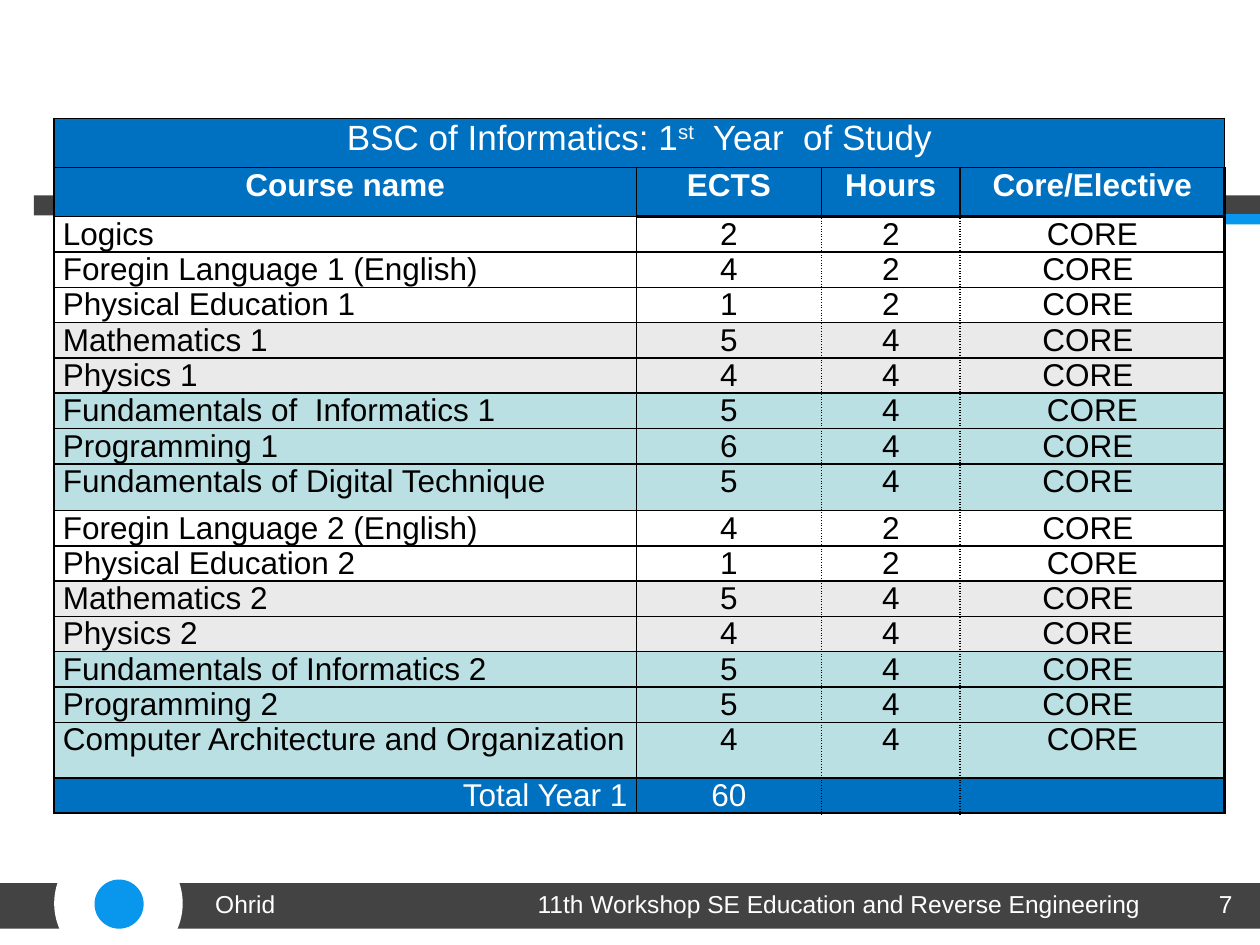
from typing import NamedTuple, Optional

from lxml import etree
from pptx import Presentation, util as u
from pptx.dml.color import RGBColor
from pptx.enum import shapes, text
from pptx.oxml.ns import qn

COLORS = {
    "white": "FFFFFF", "black": "000000", "charcoal": "434343", "accent": "0996ED",
    "header": "0070C0", "science": "EAEAEA", "computing": "BBE0E3",
}
FONT = "Arial"
ALIGN = text.PP_ALIGN
OVAL, RECTANGLE = shapes.MSO_SHAPE.OVAL, shapes.MSO_SHAPE.RECTANGLE


class Box(NamedTuple):
    """Left, top, width and height in percent of the slide."""
    left: float
    top: float
    width: float
    height: float


class Decoration(NamedTuple):
    kind: shapes.MSO_SHAPE
    box: Box
    color: str


class Label(NamedTuple):
    wording: str
    box: Box
    align: ALIGN


class Row(NamedTuple):
    values: tuple[str, ...]
    fill: Optional[str] = None
    height: float = 3.73
    ink: str = "black"
    first_align: ALIGN = ALIGN.JUSTIFY
    bold: bool = False


class Border(NamedTuple):
    width: float = 1
    dash: str = "solid"


FOOTER_TOP, FOOTER_HEIGHT = 93.47, 4.8
DECORATIONS = [
    Decoration(RECTANGLE, Box(13.8, FOOTER_TOP, 86.2, FOOTER_HEIGHT), "charcoal"),
    Decoration(RECTANGLE, Box(0, FOOTER_TOP, 5.1, FOOTER_HEIGHT), "charcoal"),
    Decoration(OVAL, Box(4.3, 88.8, 10.2, 13.6), "white"),
    Decoration(OVAL, Box(7.5, 93.07, 3.9, 5.2), "accent"),
    Decoration(RECTANGLE, Box(2.7, 20.67, 97.3, 2.13), "charcoal"),
    Decoration(RECTANGLE, Box(4.3, 22.67, 95.7, 1.07), "accent"),
]
LABELS = [
    Label("7", Box(93.3, FOOTER_TOP, 5.5, 6.93), ALIGN.RIGHT),
    Label("Ohrid", Box(16.1, FOOTER_TOP, 27.6, 6.93), ALIGN.LEFT),
    Label("11th Workshop SE Education and Reverse Engineering",
          Box(39.8, FOOTER_TOP, 53.6, 6.93), ALIGN.CENTER),
]
TABLE_BOX = Box(4.3, 12.53, 92.9, 77.33)
COLUMN_WIDTHS = [46.2, 14.7, 11, 21]
TITLE_RUNS = [("BSC of Informatics: 1", 0), ("st", 30000), ("  Year  of Study", 0)]
ROWS = [
    Row(("", "", "", ""), "header", 5.2, "white", ALIGN.CENTER),
    Row(("Course name", "ECTS", "Hours", "Core/Elective"), "header", 5.2, "white",
        ALIGN.CENTER, True),
    Row(("Logics ", "2", "2", "CORE"), "white"),
    Row(("Foregin Language 1 (English)", "4", "2", "CORE "), "white"),
    Row(("Physical Education 1", "1", "2", "CORE "), "white"),
    Row(("Mathematics 1", "5", "4", "CORE "), "science"),
    Row(("Physics 1", "4", "4", "CORE "), "science"),
    Row(("Fundamentals of  Informatics 1", "5", "4", "CORE"), "computing"),
    Row(("Programming 1", "6", "4", "CORE "), "computing"),
    Row(("Fundamentals of Digital Technique", "5", "4", "CORE "), "computing", 4.93),
    Row(("Foregin Language 2 (English)", "4", "2", "CORE ")),
    Row(("Physical Education 2", "1", "2", "CORE")),
    Row(("Mathematics 2", "5", "4", "CORE "), "science"),
    Row(("Physics 2", "4", "4", "CORE "), "science"),
    Row(("Fundamentals of Informatics 2", "5", "4", "CORE "), "computing"),
    Row(("Programming 2", "5", "4", "CORE "), "computing"),
    Row(("Computer Architecture and Organization", "4", "4", "CORE"), "computing", 5.87),
    Row(("Total Year 1", "60", "", ""), "header", ink="white", first_align=ALIGN.RIGHT),
]

presentation = Presentation()
presentation.slide_width, presentation.slide_height = u.Inches(10), u.Inches(7.5)


def across(percent: float) -> int:
    return round(presentation.slide_width * percent / 100)


def down(percent: float) -> int:
    return round(presentation.slide_height * percent / 100)


def place(box: Box) -> tuple[int, int, int, int]:
    return across(box.left), down(box.top), across(box.width), down(box.height)


def rgb(name: str) -> RGBColor:
    return RGBColor.from_string(COLORS[name])


def style(paragraph, size: float, color: str, align: ALIGN, bold: bool = False) -> None:
    paragraph.alignment = align
    font = paragraph.font
    font.name, font.size, font.bold = FONT, u.Pt(size), bold
    font.color.rgb = rgb(color)


def draw_decoration(slide, decoration: Decoration) -> None:
    shape = slide.shapes.add_shape(decoration.kind, *place(decoration.box))
    shape.shadow.inherit = False
    shape.fill.solid()
    shape.fill.fore_color.rgb = rgb(decoration.color)
    shape.line.fill.background()


def draw_label(slide, label: Label) -> None:
    frame = slide.shapes.add_textbox(*place(label.box)).text_frame
    frame.word_wrap = True
    frame.text = label.wording
    style(frame.paragraphs[0], 14, "white", label.align)


def cell_borders(row: int, column: int) -> dict[str, Border]:
    """Dotted between the figures, heavier at the right edge and around the courses."""
    last_row, last_column = len(ROWS) - 1, len(COLUMN_WIDTHS) - 1
    borders = {side: Border() for side in "LRTB"}
    if row == 0 or column == 0:
        return borders
    if row > 1 and column > 1:
        borders["L"] = Border(dash="sysDot")
    if column == last_column:
        borders["R"] = Border(2.25)
    elif row > 1:
        borders["R"] = Border(dash="sysDot")
    if row in (2, last_row):
        borders["T"] = Border(1.5)
    if row in (1, last_row - 1, last_row):
        borders["B"] = Border(1.5)
    return borders


def set_borders(cell, borders: dict[str, Border]) -> None:
    properties = cell._tc.get_or_add_tcPr()
    for position, (side, border) in enumerate(borders.items()):
        line = etree.Element(qn(f"a:ln{side}"), w=str(u.Pt(border.width)))
        fill = etree.SubElement(line, qn("a:solidFill"))
        etree.SubElement(fill, qn("a:srgbClr"), val=COLORS["black"])
        etree.SubElement(line, qn("a:prstDash"), val=border.dash)
        properties.insert(position, line)


def draw_table(slide) -> None:
    table = slide.shapes.add_table(len(ROWS), len(COLUMN_WIDTHS), *place(TABLE_BOX)).table
    table.first_row = table.horz_banding = False
    for column, width in zip(table.columns, COLUMN_WIDTHS):
        column.width = across(width)
    for row_index, row in enumerate(ROWS):
        table.rows[row_index].height = down(row.height)
        for column_index, value in enumerate(row.values):
            cell = table.cell(row_index, column_index)
            cell.margin_left = cell.margin_right = u.Inches(0.07)
            cell.margin_top = cell.margin_bottom = 0
            cell.text = value
            align = ALIGN.CENTER if column_index else row.first_align
            style(cell.text_frame.paragraphs[0], 18, row.ink, align, row.bold)
            if row.fill:
                cell.fill.solid()
                cell.fill.fore_color.rgb = rgb(row.fill)
            else:
                cell.fill.background()
            set_borders(cell, cell_borders(row_index, column_index))

    title = table.cell(0, 0)
    title.merge(table.cell(0, len(COLUMN_WIDTHS) - 1))
    paragraph = title.text_frame.paragraphs[0]
    paragraph.font.size = u.Pt(20)
    for wording, baseline in TITLE_RUNS:
        run = paragraph.add_run()
        run.text = wording
        if baseline:
            run._r.get_or_add_rPr().set("baseline", str(baseline))


def main() -> None:
    slide = presentation.slides.add_slide(presentation.slide_layouts[6])
    for decoration in DECORATIONS:
        draw_decoration(slide, decoration)
    draw_table(slide)
    for label in LABELS:
        draw_label(slide, label)
    presentation.save("out.pptx")


if __name__ == "__main__":
    main()
